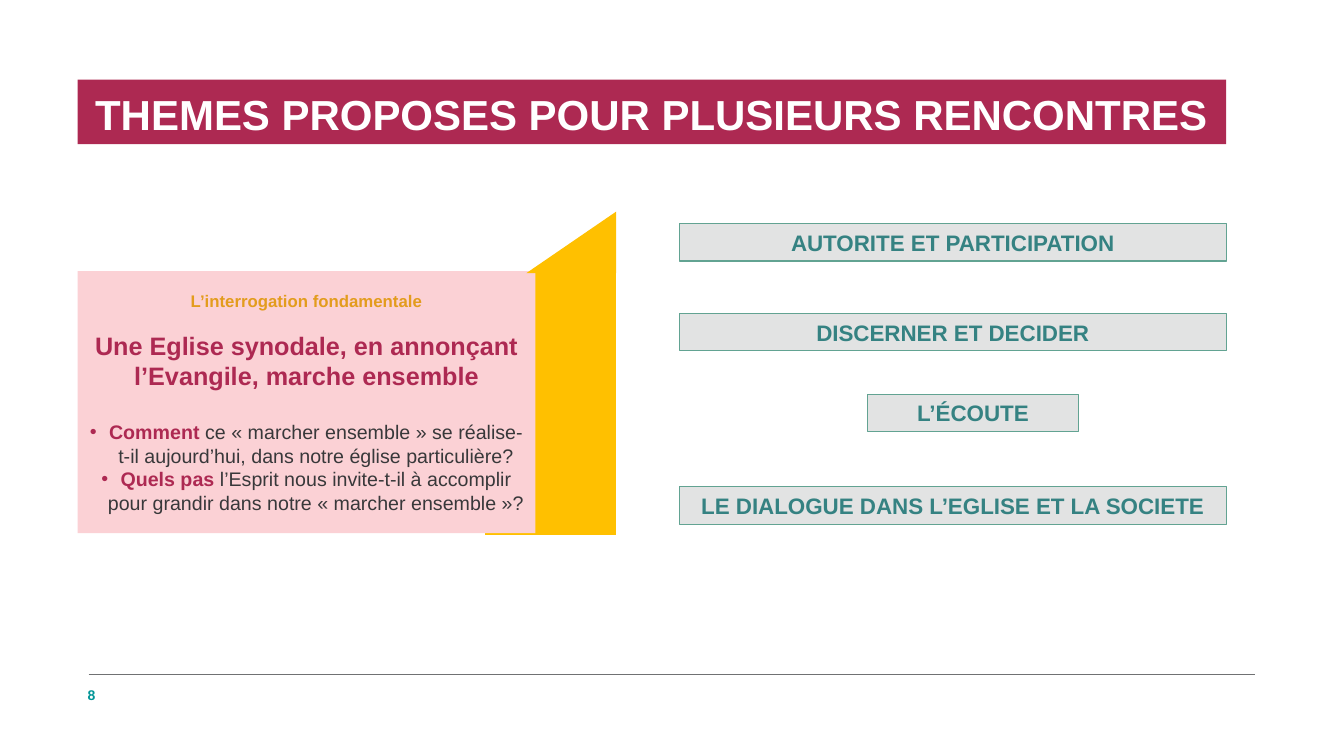
"""Build the slide of proposed themes for several meetings."""
import pptx
import pptx.util
import pptx.dml.color
import pptx.enum.shapes
import pptx.enum.text
import pptx.oxml
import pptx.oxml.ns

Inches, Pt = pptx.util.Inches, pptx.util.Pt
SHAPE = pptx.enum.shapes.MSO_SHAPE
ANCHOR = pptx.enum.text.MSO_ANCHOR
ALIGN = pptx.enum.text.PP_ALIGN

COLORS = {
    "crimson": "AD2952", "pink": "FBD1D5", "yellow": "FFC000",
    "amber": "E39C1D", "ink": "38383A", "white": "FFFFFF",
    "label": "E2E3E3", "label_line": "62A392", "label_text": "358282",
    "rule": "707173", "number": "009597",
}
FONT = "Arial"
TITLE = "THEMES PROPOSES POUR PLUSIEURS RENCONTRES"
THEMES = [
    ("AUTORITE ET PARTICIPATION", 6.74, 2.22, 5.42),
    ("DISCERNER ET DECIDER", 6.74, 3.11, 5.42),
    ("L’ÉCOUTE", 8.6, 3.91, 2.1),
    ("LE DIALOGUE DANS L’EGLISE ET LA SOCIETE", 6.74, 4.83, 5.42),
]
QUESTION = [
    {"runs": [("L’interrogation fondamentale", "amber", True)], "size": 12, "before": 0, "bullet": False},
    {"runs": [("Une Eglise synodale, en annonçant l’Evangile, marche ensemble", "crimson", True)],
     "size": 18, "before": 14, "bullet": False},
    {"runs": [("Comment ", "crimson", True),
              ("ce «\u00a0marcher ensemble\u00a0» se réalise-t-il aujourd’hui, "
               "dans notre église particulière?", "ink", False)],
     "size": 14, "before": 21, "bullet": True},
    {"runs": [("Quels pas ", "crimson", True),
              ("l’Esprit nous invite-t-il à accomplir pour grandir dans notre "
               "«\u00a0marcher ensemble\u00a0»?", "ink", False)],
     "size": 14, "before": 0, "bullet": True},
]


def rgb(name):
    return pptx.dml.color.RGBColor.from_string(COLORS[name])


def place(sp, left, top, width, height):
    sp.left, sp.top = Inches(left), Inches(top)
    sp.width, sp.height = Inches(width), Inches(height)


def paint(sp, fill):
    sp.fill.solid()
    sp.fill.fore_color.rgb = rgb(fill)


def style(r, size, color, bold=True):
    r.font.name, r.font.size, r.font.bold = FONT, Pt(size), bold
    r.font.color.rgb = rgb(color)


def add_block(slide, kind, box, fill):
    sp = slide.shapes.add_shape(kind, *map(Inches, box))
    sp.shadow.inherit = False
    paint(sp, fill)
    sp.line.fill.background()
    return sp


def write_line(tf, text, size, color, align, anchor):
    tf.text = text
    tf.word_wrap = True
    tf.auto_size = pptx.enum.text.MSO_AUTO_SIZE.NONE
    tf.vertical_anchor = anchor
    p = tf.paragraphs[0]
    p.alignment = align
    style(p.runs[0], size, color)
    return p


def set_bullet(p, bullet):
    pPr = p._p.get_or_add_pPr()
    indent = Inches(0.19) if bullet else 0
    pPr.set("marL", str(indent))
    pPr.set("indent", str(-indent))
    tag = "a:buChar" if bullet else "a:buNone"
    mark = pptx.oxml.parse_xml(f"<{tag} {pptx.oxml.ns.nsdecls('a')}/>")
    if bullet:
        mark.set("char", "•")
    pPr.append(mark)


def fill_question(body):
    tf = body.text_frame
    tf.word_wrap = True
    tf.auto_size = pptx.enum.text.MSO_AUTO_SIZE.NONE
    tf.vertical_anchor = ANCHOR.MIDDLE
    for i, item in enumerate(QUESTION):
        p = tf.add_paragraph() if i else tf.paragraphs[0]
        set_bullet(p, item["bullet"])
        p.alignment = ALIGN.CENTER
        p.space_before = Pt(item["before"])
        for text, color, bold in item["runs"]:
            r = p.add_run()
            r.text = text
            style(r, item["size"], color, bold)


def main():
    prs = pptx.Presentation()
    prs.slide_width, prs.slide_height = Inches(13.33), Inches(7.5)
    slide = prs.slides.add_slide(prs.slide_layouts[1])
    title, body = slide.shapes.title, slide.placeholders[1]

    rule = slide.shapes.add_connector(
        pptx.enum.shapes.MSO_CONNECTOR.STRAIGHT,
        Inches(0.88), Inches(6.69), Inches(12.45), Inches(6.69))
    rule.line.color.rgb, rule.line.width = rgb("rule"), Pt(0.5)
    rule._element.spPr.append(
        pptx.oxml.parse_xml(f"<a:effectLst {pptx.oxml.ns.nsdecls('a')}/>"))
    number = slide.shapes.add_textbox(*map(Inches, (0.77, 6.75, 0.59, 0.28)))
    write_line(number.text_frame, "8", 10, "number", ALIGN.LEFT, ANCHOR.MIDDLE)

    place(title, 0.77, 0.79, 11.39, 0.64)
    paint(title, "crimson")
    p = write_line(title.text_frame, TITLE, 30, "white", ALIGN.CENTER, ANCHOR.BOTTOM)
    p.line_spacing = 0.85

    for text, left, top, width in THEMES:
        sp = add_block(slide, SHAPE.RECTANGLE, (left, top, width, 0.37), "label")
        sp.line.color.rgb, sp.line.width = rgb("label_line"), Pt(0.75)
        write_line(sp.text_frame, text, 16, "label_text", ALIGN.CENTER, ANCHOR.MIDDLE)

    add_block(slide, SHAPE.FLOWCHART_PROCESS, (4.81, 2.71, 1.3, 2.6), "yellow")
    place(body, 0.77, 2.69, 4.54, 2.6)
    paint(body, "pink")
    fill_question(body)
    slide.shapes._spTree.append(body._element)
    fold = add_block(slide, SHAPE.RIGHT_TRIANGLE, (5.36, 1.96, 0.61, 0.89), "yellow")
    fold.rotation = 270

    prs.save("out.pptx")


if __name__ == "__main__":
    main()
